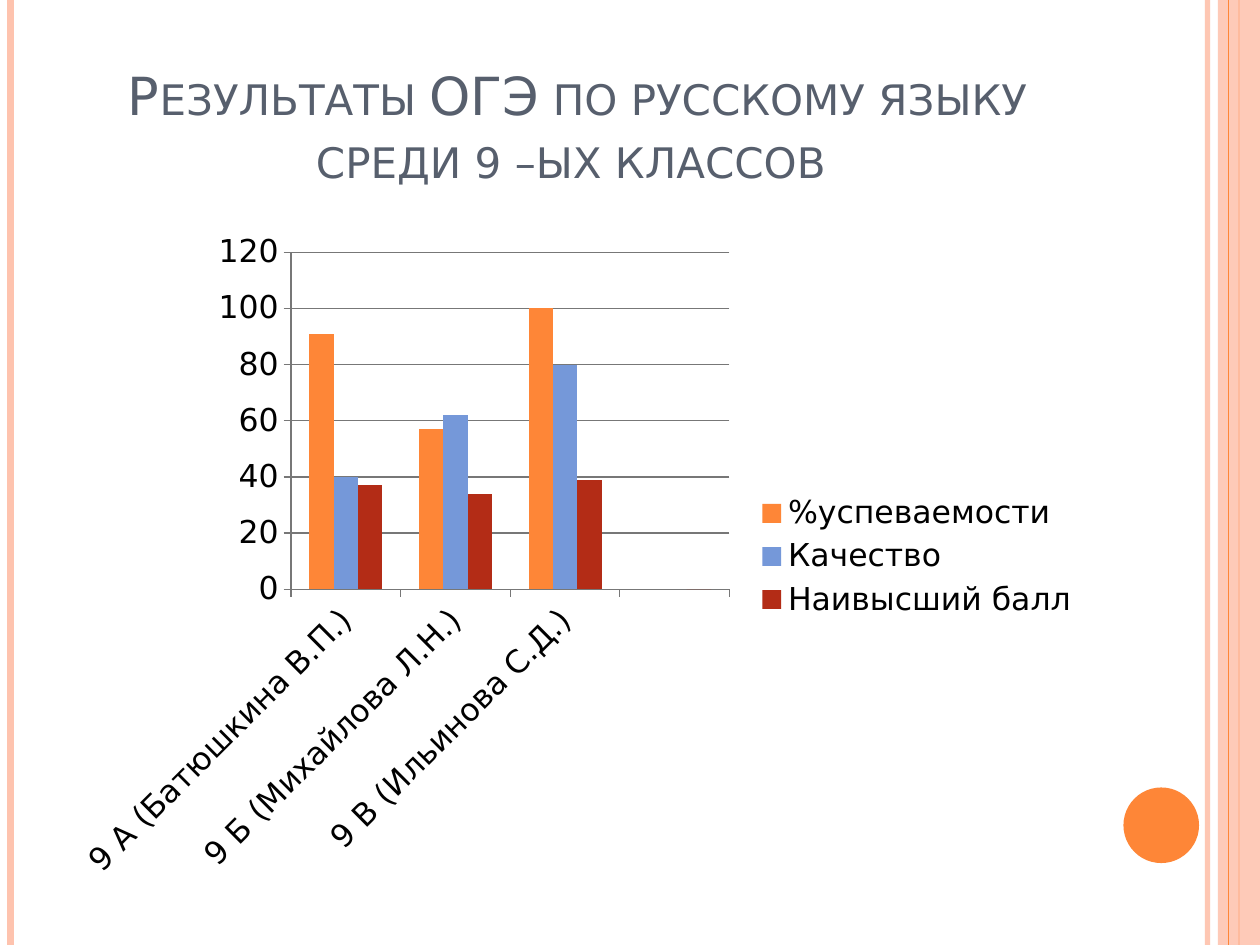
from dataclasses import dataclass
from lxml.etree import SubElement
from pptx import Presentation
from pptx.chart.data import CategoryChartData
from pptx.dml.color import RGBColor
from pptx.enum.chart import XL_CHART_TYPE, XL_LEGEND_POSITION, XL_TICK_MARK
from pptx.enum.shapes import MSO_CONNECTOR, MSO_SHAPE
from pptx.enum.text import MSO_ANCHOR, PP_ALIGN
from pptx.oxml.ns import qn
from pptx.util import Pt


@dataclass(frozen=True)
class Theme:
    """Colours, font and type sizes of the slide."""
    font: str = "DejaVu Sans"
    title: int = 30
    label: int = 18
    pale: str = "FEC3AE"
    orange: str = "FE8637"
    blue: str = "7598D9"
    red: str = "B32C16"
    slate: str = "575F6D"
    black: str = "000000"
    grid: str = "777777"


def color(code):
    """Turn a hex code into a colour."""
    return RGBColor.from_string(code)


def fade(fill, alpha):
    """Set the opacity of a solid fill in percent."""
    tint = fill._xPr.find(qn("a:solidFill"))[0]
    SubElement(tint, qn("a:alpha")).set("val", str(alpha * 1000))


def write(frame, text, *, font, size, ink, align=PP_ALIGN.CENTER, caps=False):
    """Put formatted text into a text frame."""
    para = frame.paragraphs[0]
    para.alignment = align
    run = para.add_run()
    run.text = text
    run.font.name, run.font.size = font, Pt(size)
    run.font.color.rgb = color(ink)
    if caps:
        run._r.get_or_add_rPr().set("cap", "small")


class Deck:
    """Holds the theme and the slide, and adds elements to it."""

    def __init__(self, theme, width, height):
        """Open a deck with one blank slide."""
        self.theme, self.height = theme, height
        self.file = Presentation()
        self.file.slide_width, self.file.slide_height = Pt(width), Pt(height)
        self.slide = self.file.slides.add_slide(self.file.slide_layouts[6])
        self.shapes = self.slide.shapes

    def stripe(self, x, width, ink, alpha=100):
        """Draw a line down the full slide."""
        line = self.shapes.add_connector(
            MSO_CONNECTOR.STRAIGHT, Pt(x), 0, Pt(x), Pt(self.height))
        line.line.width = Pt(width)
        line.line.color.rgb = color(ink)
        if alpha < 100:
            fade(line.line.fill, alpha)
        SubElement(line._element.spPr, qn("a:effectLst"))

    def shape(self, kind, box, ink, alpha=100):
        """Draw a filled shape without outline."""
        item = self.shapes.add_shape(kind, *map(Pt, box))
        item.shadow.inherit = False
        item.fill.solid()
        item.fill.fore_color.rgb = color(ink)
        item.line.fill.background()
        if alpha < 100:
            fade(item.fill, alpha)

    def title(self, text, box):
        """Add the slide title in small capitals."""
        frame = self.shapes.add_textbox(*map(Pt, box)).text_frame
        frame.word_wrap = True
        frame.vertical_anchor = MSO_ANCHOR.BOTTOM
        write(frame, text, font=self.theme.font, size=self.theme.title,
              ink=self.theme.slate, caps=True)

    def chart(self, box, names, series):
        """Add a clustered column chart with a legend."""
        data = CategoryChartData()
        data.categories = names
        for name, values, _ in series:
            data.add_series(name, values)
        chart = self.shapes.add_chart(
            XL_CHART_TYPE.COLUMN_CLUSTERED, *map(Pt, box), data).chart
        chart.has_title = False
        chart.font.name, chart.font.size = self.theme.font, Pt(self.theme.label)
        chart.font.color.rgb = color(self.theme.black)
        chart.has_legend = True
        chart.legend.position = XL_LEGEND_POSITION.RIGHT
        chart.legend.include_in_layout = False
        plot = chart.plots[0]
        plot.vary_by_categories = False
        plot.gap_width, plot.overlap = 150, 0
        for column, (_, _, ink) in zip(plot.series, series):
            column.format.fill.solid()
            column.format.fill.fore_color.rgb = color(ink)
        rows = chart.value_axis
        rows.minimum_scale, rows.maximum_scale, rows.major_unit = 0, 120, 20
        rows.has_major_gridlines = True
        for axis in (rows, chart.category_axis):
            axis.major_tick_mark = XL_TICK_MARK.OUTSIDE
        for part in (rows, chart.category_axis, rows.major_gridlines):
            part.format.line.width = Pt(0.75)
            part.format.line.color.rgb = color(self.theme.grid)


def main():
    """Build and save the slide."""
    theme = Theme()
    deck = Deck(theme, 720, 540)
    deck.stripe(690, 3, theme.pale, 93)
    deck.stripe(6, 4.5, theme.pale)
    deck.stripe(708, 1.5, theme.orange)
    deck.shape(MSO_SHAPE.RECTANGLE, (696, 0, 24, 540), theme.pale, 87)
    deck.stripe(702, 0.75, theme.orange)
    deck.shape(MSO_SHAPE.OVAL, (642, 450, 43.2, 43.2), theme.orange)
    deck.title("Результаты ОГЭ по русскому языку среди 9 –ых классов ",
               (36, 21.6, 588, 90))
    deck.chart(
        (36, 126, 588, 384),
        ["9 А (Батюшкина В.П.)", "9 Б (Михайлова Л.Н.)", "9 В (Ильинова С.Д.)", ""],
        [("%успеваемости", (91, 57, 100, None), theme.orange),
         ("Качество", (40, 62, 80, None), theme.blue),
         ("Наивысший балл", (37, 34, 39, 0), theme.red)])
    deck.file.save("out.pptx")


if __name__ == "__main__":
    main()
